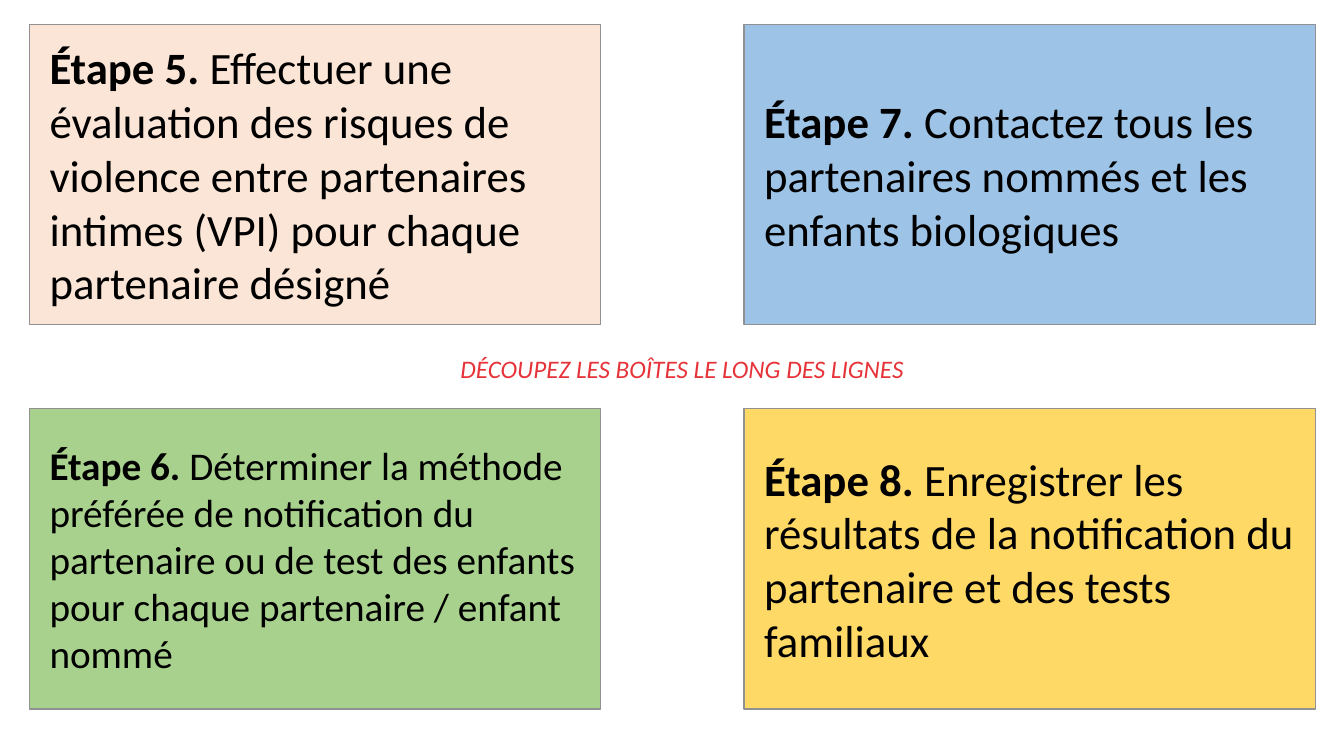
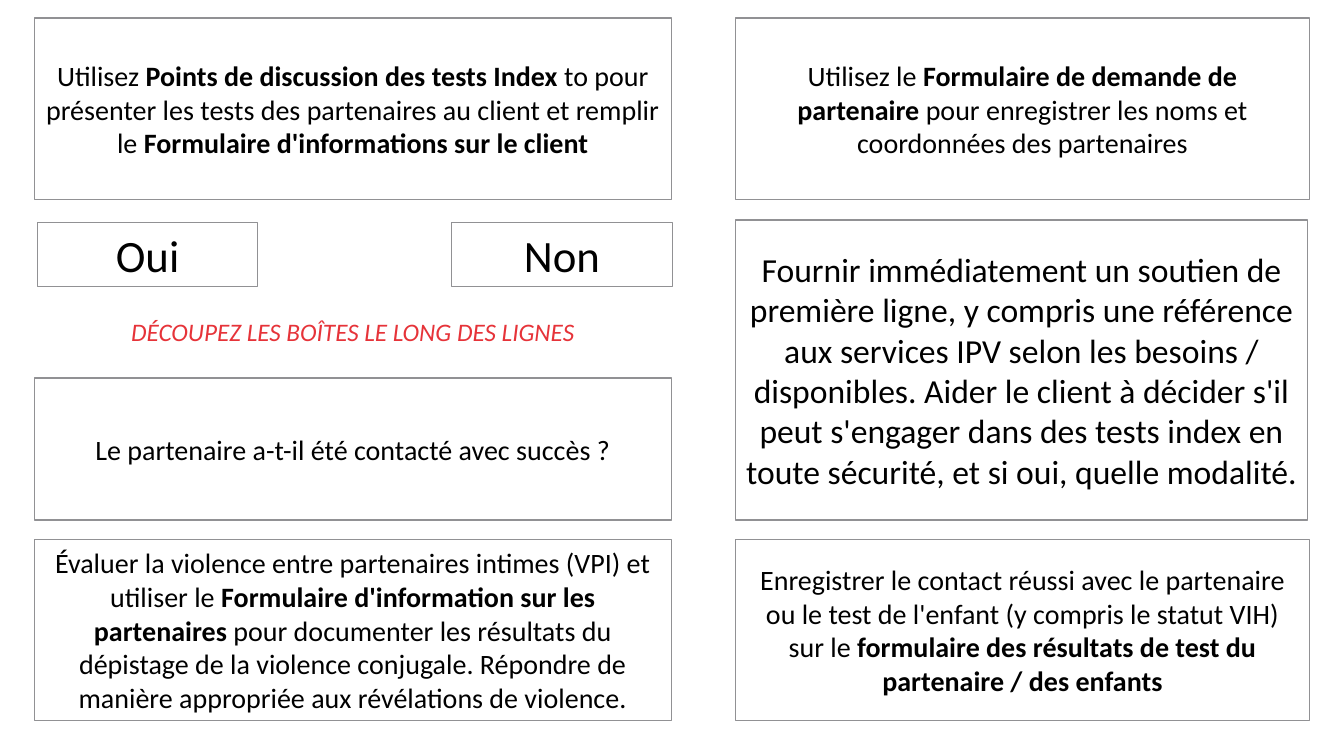
from pptx import Presentation
from pptx.dml.color import RGBColor
from pptx.enum.shapes import MSO_SHAPE
from pptx.enum.text import MSO_ANCHOR, MSO_AUTO_SIZE, PP_ALIGN
from pptx.util import Pt

FONT = "Calibri"
BLACK, GREY, RED = "000000", "919194", "E63339"
CUT_NOTE = "DÉCOUPEZ LES BOÎTES LE LONG DES LIGNES"

# Text between asterisks is bold.
# Steps run down each column: text, size, fill
STEPS = [
    ("*Étape 5. *Effectuer une évaluation des risques de violence entre "
     "partenaires intimes (VPI) pour chaque partenaire désigné", 32, "FBE5D6"),
    ("*Étape 6. *Déterminer la méthode préférée de notification du partenaire "
     "ou de test des enfants pour chaque partenaire / enfant nommé", 28, "A9D18E"),
    ("*Étape 7. *Contactez tous les partenaires nommés et les enfants "
     "biologiques", 32, "9DC3E6"),
    ("*Étape 8. *Enregistrer les résultats de la notification du partenaire "
     "et des tests familiaux", 32, "FFD966"),
]
STEP_LEFTS, STEP_TOPS = (21, 531.4), (17.3, 292)
STEP_W, STEP_H = 408.2, 214.5

# Columns: left, width. Rows: top, height
LEFT_COL, RIGHT_COL = (24.5, 455), (525.6, 409.6)
TOP_ROW, SUPPORT_ROW, QUESTION_ROW, BOTTOM_ROW = (
    (13, 129.6), (157, 214.5), (270, 101.5), (385.2, 129.6))
ACTIONS = [
    (LEFT_COL, TOP_ROW, 20,
     "Utilisez *Points de discussion des tests Index *to pour présenter les "
     "tests des partenaires au client et remplir le *Formulaire "
     "d'informations sur le client*"),
    (RIGHT_COL, TOP_ROW, 20,
     "Utilisez le *Formulaire de demande de partenaire *pour enregistrer les "
     "noms et coordonnées des partenaires"),
    (LEFT_COL, QUESTION_ROW, 20,
     "Le partenaire a-t-il été contacté avec succès ?"),
    ((525.6, STEP_W), SUPPORT_ROW, 24,
     "Fournir immédiatement un soutien de première ligne, y compris une "
     "référence aux services IPV selon les besoins / disponibles. Aider le "
     "client à décider s'il peut s'engager dans des tests index en toute "
     "sécurité, et si oui, quelle modalité."),
    (LEFT_COL, BOTTOM_ROW, 20,
     "Évaluer la violence entre partenaires intimes (VPI) et utiliser le "
     "*Formulaire d'information sur les partenaires *pour documenter les "
     "résultats du dépistage de la violence conjugale. Répondre de manière "
     "appropriée aux révélations de violence."),
    (RIGHT_COL, BOTTOM_ROW, 20,
     "Enregistrer le contact réussi avec le partenaire ou le test de l'enfant "
     "(y compris le statut VIH) sur le *formulaire des résultats de test du "
     "partenaire / des enfants*"),
]
ANSWERS = [("Oui", 26.6), ("Non", 322.6)]
ANSWER_TOP, ANSWER_W, ANSWER_H = 159, 157.7, 46


def rgb(color):
    return RGBColor.from_string(color)


def write(sp, text, size, color=BLACK, italic=False, align=PP_ALIGN.CENTER):
    """Add one paragraph, with the parts between asterisks in bold."""
    tf = sp.text_frame
    tf.word_wrap = True
    p = tf.paragraphs[0]
    p.alignment = align
    for i, part in enumerate(text.split("*")):
        if not part:
            continue
        r = p.add_run()
        r.text = part
        font = r.font
        font.name, font.size = FONT, Pt(size)
        font.bold, font.italic = i % 2 == 1, italic
        font.color.rgb = rgb(color)


def add_box(s, left, top, width, height, fill=None, line_width=1):
    sp = s.shapes.add_shape(MSO_SHAPE.RECTANGLE, Pt(left), Pt(top),
                            Pt(width), Pt(height))
    sp.shadow.inherit = False
    if fill:
        sp.fill.solid()
        sp.fill.fore_color.rgb = rgb(fill)
    else:
        sp.fill.background()
    sp.line.color.rgb = rgb(GREY)
    sp.line.width = Pt(line_width)
    sp.text_frame.vertical_anchor = MSO_ANCHOR.MIDDLE
    return sp


def add_cut_note(s, left, top, width):
    sp = s.shapes.add_textbox(Pt(left), Pt(top), Pt(width), Pt(29))
    write(sp, CUT_NOTE, 18, RED, italic=True)
    sp.text_frame.auto_size = MSO_AUTO_SIZE.SHAPE_TO_FIT_TEXT


def build_steps(s):
    for i, (text, size, fill) in enumerate(STEPS):
        col, row = divmod(i, len(STEP_TOPS))
        sp = add_box(s, STEP_LEFTS[col], STEP_TOPS[row], STEP_W, STEP_H, fill)
        sp.text_frame.margin_left = Pt(14.4)
        write(sp, text, size, align=PP_ALIGN.LEFT)
    add_cut_note(s, 248.5, 249, 477.4)


def build_actions(s):
    for (left, width), (top, height), size, text in ACTIONS:
        write(add_box(s, left, top, width, height), text, size)
    for text, left in ANSWERS:
        sp = add_box(s, left, ANSWER_TOP, ANSWER_W, ANSWER_H, line_width=0.75)
        write(sp, text, 32)
        sp.text_frame.vertical_anchor = MSO_ANCHOR.TOP
        sp.text_frame.auto_size = MSO_AUTO_SIZE.SHAPE_TO_FIT_TEXT
    left, width = LEFT_COL
    add_cut_note(s, left, 222.5, width)


def main():
    prs = Presentation()
    prs.slide_width, prs.slide_height = Pt(960), Pt(540)
    for build in (build_steps, build_actions):
        build(prs.slides.add_slide(prs.slide_layouts[6]))
    prs.save("out.pptx")


if __name__ == "__main__":
    main()
